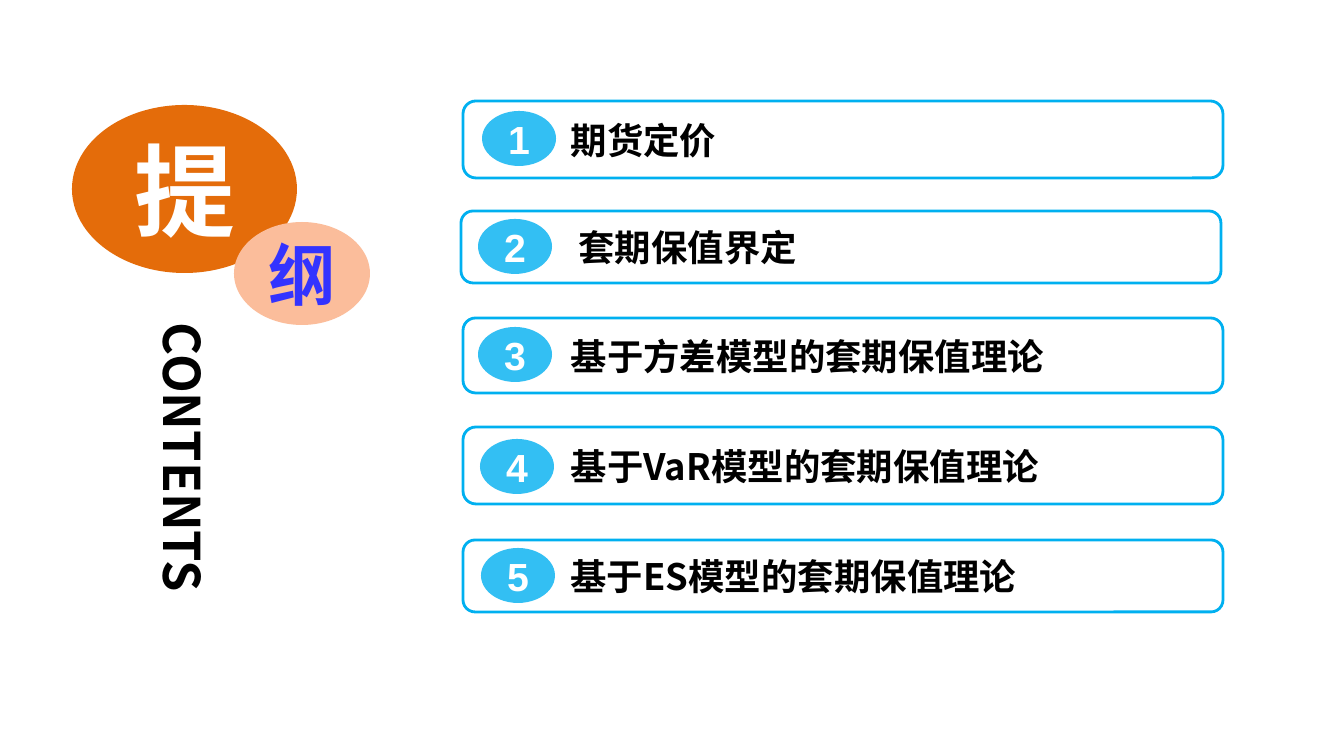
"""Build the contents slide: two title ellipses and five numbered topics."""
from dataclasses import dataclass

from lxml.etree import SubElement
from pptx import Presentation
from pptx.dml.color import RGBColor
from pptx.enum.shapes import MSO_SHAPE
from pptx.enum.text import MSO_ANCHOR, PP_ALIGN
from pptx.oxml.ns import qn
from pptx.util import Pt

TOPICS = [
    {"text": "期货定价", "row": (463, 101, 77), "badge": (482, 111), "indent": 104},
    {"text": "套期保值界定", "row": (461, 211, 72), "badge": (478, 219), "indent": 114},
    {"text": "基于方差模型的套期保值理论", "row": (463, 318, 75), "badge": (478, 327), "indent": 104},
    {"text": "基于VaR模型的套期保值理论", "row": (463, 427, 77), "badge": (480, 439), "indent": 104},
    {"text": "基于ES模型的套期保值理论", "row": (463, 540, 72), "badge": (481, 548), "indent": 104},
]
ROW_WIDTH = 760
BADGE_SIZE = (74, 55)
TITLE_BOX = (72, 105, 225, 168)
SUBTITLE_BOX = (234, 222, 136, 103)
CONTENTS_BOX = (139, 323, 90, 302)


@dataclass(frozen=True)
class Theme:
    """Colours, fonts and type sizes of the slide."""
    white: str = "FFFFFF"
    black: str = "000000"
    blue: str = "00B0F0"
    orange: str = "E46C0A"
    peach: str = "FBBD9B"
    violet: str = "3333FF"
    font: str = "Noto Sans CJK SC"
    digit_font: str = "Arial"
    title: int = 72
    subtitle: int = 48
    contents: int = 36
    digit: int = 28
    topic: int = 26


THEME = Theme()


def px(n):
    """Turn pixels into EMU at 100.8 pixels to the inch."""
    return round(n * 914400 / 100.8)


def write(s, text, *, size, color, font=THEME.font, align=PP_ALIGN.CENTER, indent=0, wrap=True):
    """Put one bold, vertically centred line of text in a shape."""
    tf = s.text_frame
    tf.word_wrap = wrap
    tf.vertical_anchor = MSO_ANCHOR.MIDDLE
    tf.margin_left = px(indent)
    tf.margin_right = tf.margin_top = tf.margin_bottom = 0
    p = tf.paragraphs[0]
    p.alignment = align
    r = p.add_run()
    r.text = text
    r.font.size = Pt(size)
    r.font.bold = True
    r.font.color.rgb = RGBColor.from_string(color)
    r.font.name = font
    SubElement(r.font._element, qn("a:ea"), typeface=font)


def add_shape(slide, kind, box, fill, line=None, opacity=None):
    """Add a flat preset shape."""
    s = slide.shapes.add_shape(kind, *map(px, box))
    s.shadow.inherit = False
    s.fill.solid()
    s.fill.fore_color.rgb = RGBColor.from_string(fill)
    if opacity:
        clr = s._element.spPr.find(qn("a:solidFill"))[0]
        SubElement(clr, qn("a:alpha"), val=str(opacity * 1000))
    if line:
        s.line.color.rgb = RGBColor.from_string(line)
        s.line.width = Pt(2)
    else:
        s.line.fill.background()
    return s


def add_heading(slide):
    """Add the two title ellipses and the vertical caption."""
    s = add_shape(slide, MSO_SHAPE.OVAL, TITLE_BOX, THEME.orange)
    write(s, "提", size=THEME.title, color=THEME.white)
    s = add_shape(slide, MSO_SHAPE.OVAL, SUBTITLE_BOX, THEME.peach)
    write(s, "纲", size=THEME.subtitle, color=THEME.violet)
    s = slide.shapes.add_textbox(*map(px, CONTENTS_BOX))
    write(s, "CONTENTS", size=THEME.contents, color=THEME.black, align=PP_ALIGN.LEFT)
    s.text_frame._txBody.bodyPr.set("vert", "eaVert")


def add_topic(slide, number, topic):
    """Add one outlined row with its number badge."""
    left, top, height = topic["row"]
    row = add_shape(slide, MSO_SHAPE.ROUNDED_RECTANGLE, (left, top, ROW_WIDTH, height),
                    THEME.white, line=THEME.blue)
    write(row, topic["text"], size=THEME.topic, color=THEME.black,
          align=PP_ALIGN.LEFT, indent=topic["indent"])
    badge = add_shape(slide, MSO_SHAPE.OVAL, topic["badge"] + BADGE_SIZE, THEME.blue, opacity=80)
    write(badge, str(number), size=THEME.digit, color=THEME.white,
          font=THEME.digit_font, wrap=False)


def main():
    """Build and save the slide."""
    prs = Presentation()
    prs.slide_width, prs.slide_height = px(1344), px(756)
    slide = prs.slides.add_slide(prs.slide_layouts[6])
    add_heading(slide)
    for number, topic in enumerate(TOPICS, 1):
        add_topic(slide, number, topic)
    prs.save("out.pptx")


if __name__ == "__main__":
    main()
